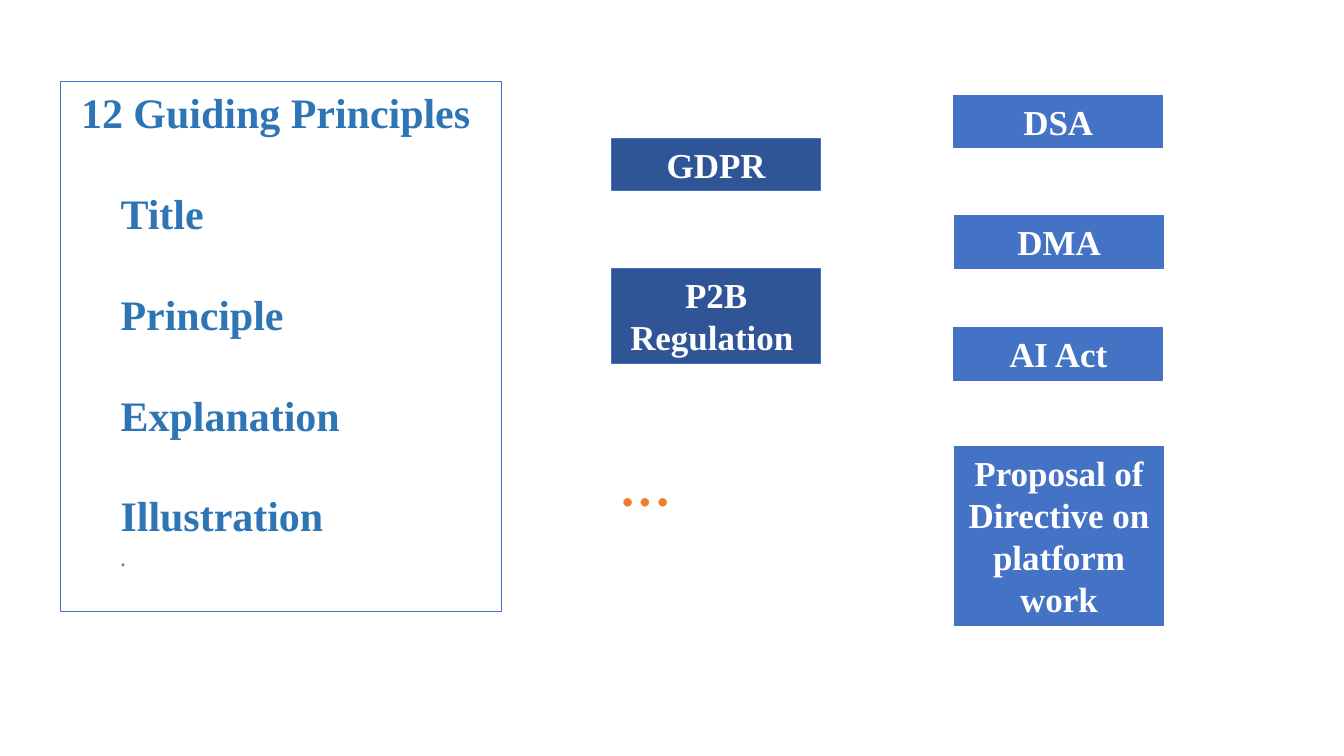
"""Build a slide relating twelve guiding principles to EU legislation."""
from dataclasses import dataclass, field

from pptx import Presentation
from pptx.dml.color import RGBColor
from pptx.enum.shapes import MSO_SHAPE
from pptx.enum.text import MSO_ANCHOR, PP_ALIGN
from pptx.util import Cm, Pt

SERIF = "Times New Roman"
BORDER = "4472C4"
IN_FORCE = "2F5597"
PROPOSED = "4472C4"
HEADING = {"name": SERIF, "size": Pt(30), "bold": True}
LAW = {"name": SERIF, "size": Pt(25), "bold": True}
CLOSING = {"name": SERIF, "size": Pt(18), "bold": False, "italic": True}
MORE = {"name": "Calibri", "size": Pt(50)}


@dataclass
class Line:
    text: str
    font: dict
    color: str
    layout: dict = field(default_factory=dict)


@dataclass
class Box:
    left: float
    top: float
    width: float
    height: float
    lines: list[Line]
    fill: str | None = None
    anchor: MSO_ANCHOR = MSO_ANCHOR.TOP


def rgb(value: str) -> RGBColor:
    """Turn a hex string into a colour."""
    return RGBColor.from_string(value)


def apply(target, values: dict) -> None:
    """Set each named attribute on the target."""
    for name, value in values.items():
        setattr(target, name, value)


def write(frame, lines: list[Line]) -> None:
    """Write one paragraph per line into a text frame."""
    frame.word_wrap = True
    for index, line in enumerate(lines):
        paragraph = frame.add_paragraph() if index else frame.paragraphs[0]
        apply(paragraph, {"alignment": PP_ALIGN.LEFT} | line.layout)
        run = paragraph.add_run()
        run.text = line.text
        apply(run.font, line.font)
        run.font.color.rgb = rgb(line.color)


def draw_box(slide, box: Box) -> None:
    """Draw an outlined rectangle with its text."""
    bounds = map(Cm, (box.left, box.top, box.width, box.height))
    shape = slide.shapes.add_shape(MSO_SHAPE.RECTANGLE, *bounds)
    shape.shadow.inherit = False
    if box.fill:
        shape.fill.solid()
        shape.fill.fore_color.rgb = rgb(box.fill)
    else:
        shape.fill.background()
    shape.line.color.rgb = rgb(BORDER)
    shape.line.width = Pt(0.75)
    shape.text_frame.vertical_anchor = box.anchor
    write(shape.text_frame, box.lines)


def law_box(name: str, left: float, top: float, height: float, fill: str) -> Box:
    """Describe the box of one law."""
    layout = {"alignment": PP_ALIGN.CENTER, "line_spacing": Pt(30)}
    return Box(left, top, 5.26, height, [Line(name, LAW, "FFFFFF", layout)], fill)


def principles_box() -> Box:
    """Describe the box listing the parts of each principle."""
    blue = "2E75B6"
    title_layout = {"alignment": PP_ALIGN.CENTER, "line_spacing": Pt(36)}
    part_layout = {"line_spacing": Pt(36), "space_before": Pt(36)}
    closing_layout = {"alignment": PP_ALIGN.JUSTIFY, "line_spacing": Pt(22)}
    parts = ("Title", "Principle", "Explanation", "Illustration")
    lines = [
        Line("12 Guiding Principles ", HEADING, blue, title_layout),
        *(Line(f"\t{part}", HEADING, blue, part_layout) for part in parts),
        Line("\t. ", CLOSING, "808080", closing_layout),
    ]
    return Box(1.52, 2.06, 11.13, 13.34, lines)


def main() -> None:
    """Build and save the slide."""
    deck = Presentation()
    apply(deck, {"slide_width": Cm(33.87), "slide_height": Cm(19.05)})
    slide = deck.slides.add_slide(deck.slide_layouts[6])

    boxes = [
        principles_box(),
        law_box("GDPR", 15.42, 3.48, 1.32, IN_FORCE),
        law_box("P2B Regulation ", 15.42, 6.76, 2.39, IN_FORCE),
        law_box("DSA", 24.04, 2.41, 1.32, PROPOSED),
        law_box("DMA", 24.06, 5.44, 1.32, PROPOSED),
        law_box("AI Act", 24.04, 8.26, 1.32, PROPOSED),
        law_box("Proposal of Directive on platform work", 24.06, 11.25, 4.52, PROPOSED),
    ]
    for box in boxes:
        draw_box(slide, box)

    more_laws = slide.shapes.add_textbox(Cm(15.42), Cm(10.87), Cm(3.25), Cm(2.39))
    write(more_laws.text_frame, [Line("…", MORE, "ED7D31")])
    deck.save("out.pptx")


if __name__ == "__main__":
    main()
